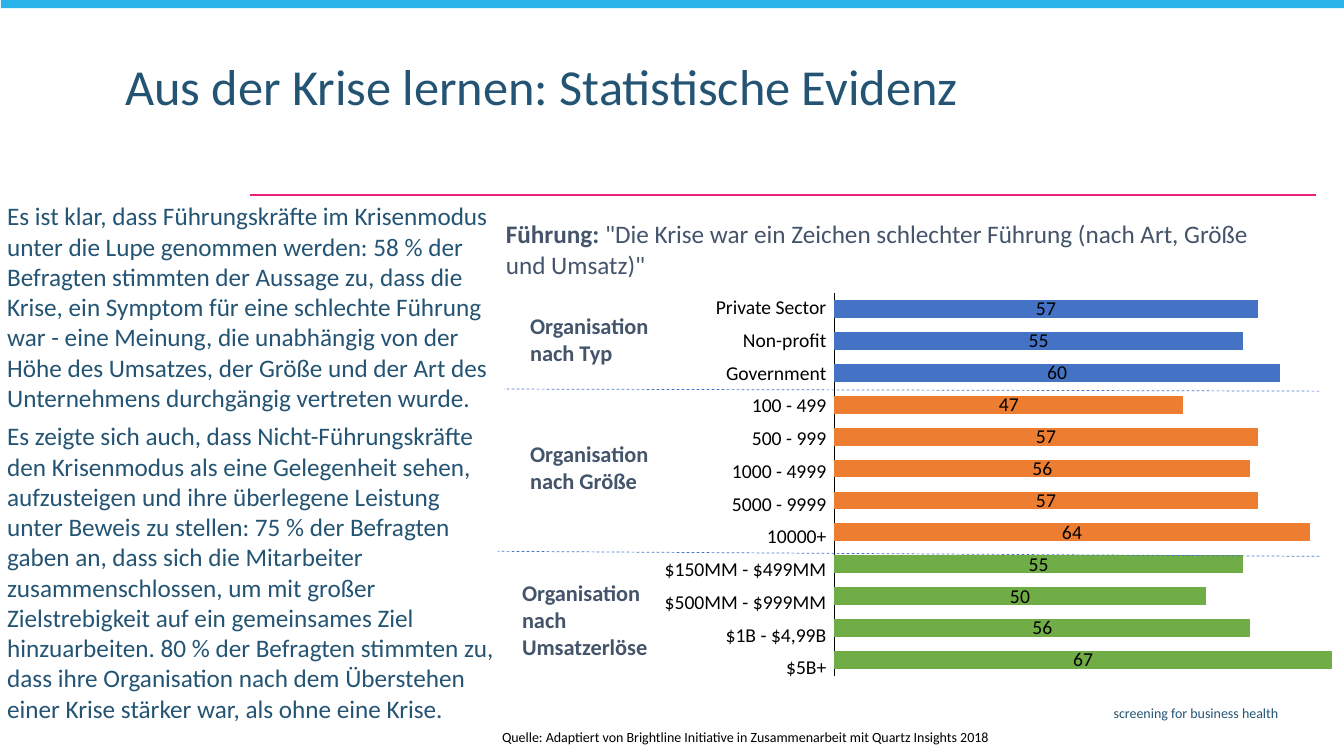
from copy import deepcopy
from lxml.etree import SubElement
from pptx import Presentation
from pptx.chart.data import CategoryChartData
from pptx.dml.color import RGBColor
from pptx.enum.chart import XL_CHART_TYPE as ChartType, XL_LABEL_POSITION as LabelPos
from pptx.enum.chart import XL_TICK_LABEL_POSITION as TickLabel, XL_TICK_MARK as Tick
from pptx.enum.dml import MSO_LINE as Dash
from pptx.enum.shapes import MSO_CONNECTOR as Connector, MSO_SHAPE as Shape
from pptx.enum.text import MSO_ANCHOR as Anchor, MSO_AUTO_SIZE as AutoSize, PP_ALIGN as Align
from pptx.oxml.ns import qn
from pptx.util import Pt

COLORS = {"navy": "245473", "sky": "29B3E8", "pink": "EC2179", "slate": "44546A",
          "blue": "4472C4", "orange": "ED7D31", "green": "70AD47", "black": "000000"}
TITLE = "Aus der Krise lernen: Statistische Evidenz"
FINDINGS = [
    "Es ist klar, dass Führungskräfte im Krisenmodus unter die Lupe genommen werden: "
    "58 % der Befragten stimmten der Aussage zu, dass die Krise, ein Symptom für eine "
    "schlechte Führung war - eine Meinung, die unabhängig von der Höhe des Umsatzes, der "
    "Größe und der Art des Unternehmens durchgängig vertreten wurde.",
    "Es zeigte sich auch, dass Nicht-Führungskräfte den Krisenmodus als eine Gelegenheit "
    "sehen, aufzusteigen und ihre überlegene Leistung unter Beweis zu stellen: 75 % der "
    "Befragten gaben an, dass sich die Mitarbeiter zusammenschlossen, um mit großer "
    "Zielstrebigkeit auf ein gemeinsames Ziel hinzuarbeiten. 80 % der Befragten stimmten "
    "zu, dass ihre Organisation nach dem Überstehen einer Krise stärker war, als ohne eine "
    "Krise.",
]
HEADING = ("Führung:",
           ' "Die Krise war ein Zeichen schlechter Führung (nach Art, Größe und Umsatz)"')
SOURCE = "Quelle: Adaptiert von Brightline Initiative in Zusammenarbeit mit Quartz Insights 2018"
TAGLINE = "screening for business health"
GROUPS = [
    ("Organisation\vnach Typ", "blue", (377.3, 221.8, 100, 41.8),
     [("Private Sector", 57, 80), ("Non-profit", 55, 60), ("Government", 60, 73)]),
    ("Organisation\vnach Größe", "orange", (377.3, 313.2, 100, 41.8),
     [("100 - 499", 47, 54), ("500 - 999", 57, 54), ("1000 - 4999", 56, 68),
      ("5000 - 9999", 57, 68), ("10000+", 64, 43)]),
    ("Organisation\vnach\vUmsatzerlöse", "green", (371.5, 412.6, 100, 61.2),
     [("$150MM - $499MM", 55, 116), ("$500MM - $999MM", 50, 116),
      ("$1B - $4,99B", 56, 73), ("$5B+", 67, 30)]),
]
LINES = [((940.3, 139), (178.6, 139), "pink", 1.5, None),
         ((942.5, 279.4), (360, 277.9), "blue", 0.5, Dash.DASH),
         ((942.5, 397.4), (355.7, 393.8), "blue", 0.5, Dash.DASH)]
LABEL_RIGHT, LABEL_TOP, LABEL_STEP, LABEL_HEIGHT = 590.4, 212.6, 23.4, 15.1
PLOT = {"x": 0.029, "y": 0.037, "w": 0.966, "h": 0.94}


def rgb(name):
    return RGBColor.from_string(COLORS[name])


def apply(target, **formats):
    for key, setting in formats.items():
        setattr(target, key, setting)


def place(part, box):
    apply(part, **dict(zip(("left", "top", "width", "height"), map(Pt, box))))


def write(part, paragraphs, size, color, inset=3.6, bold=False, wrap=True, anchor=Anchor.TOP,
          align=Align.LEFT, spacing=1.0, before=0):
    frame = part.text_frame
    apply(frame, auto_size=AutoSize.NONE, word_wrap=wrap, vertical_anchor=anchor)
    apply(frame, **{f"margin_{side}": Pt(inset) for side in ("left", "right", "top", "bottom")})
    for index, wording in enumerate(paragraphs):
        paragraph = frame.add_paragraph() if index else frame.paragraphs[0]
        paragraph.text = wording
        apply(paragraph, alignment=align, line_spacing=spacing,
              space_before=Pt(before if index else 0))
        for run in paragraph.runs:
            apply(run.font, name="Calibri", size=Pt(size), bold=bold)
            run.font.color.rgb = rgb(color)
        for line_break in paragraph._p.findall(qn("a:br")):
            line_break.insert(0, deepcopy(paragraph.runs[0]._r.rPr))
    return frame


def add_text(slide, box, paragraphs, *args, **formats):
    part = slide.shapes.add_textbox(*map(Pt, box))
    return write(part, paragraphs, *args, **formats)


def add_line(slide, start, end, color, width, dash):
    rule = slide.shapes.add_connector(Connector.STRAIGHT, *map(Pt, start + end))
    rule.line.color.rgb = rgb(color)
    apply(rule.line, width=Pt(width), dash_style=dash)
    SubElement(rule._element.spPr, qn("a:effectLst"))


def add_bars(slide, answers):
    survey = CategoryChartData()
    survey.categories = [str(number) for number in range(1, len(answers) + 1)]
    survey.add_series("Series 1", [share for _, share, _, _ in answers])
    chart = slide.shapes.add_chart(ChartType.BAR_STACKED, *map(Pt, (585.4, 198.7, 367.9, 290.9)),
                                   survey).chart
    apply(chart, has_legend=False, has_title=False)
    apply(chart.font, name="Calibri", size=Pt(10))
    chart.font.color.rgb = rgb("black")
    for axis in (chart.category_axis, chart.value_axis):
        apply(axis, tick_label_position=TickLabel.NONE, major_tick_mark=Tick.NONE,
              minor_tick_mark=Tick.NONE, has_major_gridlines=False)
    chart.category_axis.reverse_order = True
    chart.category_axis.format.line.color.rgb = rgb("black")
    chart.category_axis.format.line.width = Pt(1)
    apply(chart.value_axis, minimum_scale=0, maximum_scale=67, major_unit=16.75)
    chart.value_axis.format.line.fill.background()

    plot = chart.plots[0]
    apply(plot, gap_width=80, overlap=100, vary_by_categories=False, has_data_labels=True)
    apply(plot.data_labels, show_value=True, position=LabelPos.CENTER, number_format="#,##0",
          number_format_is_linked=False)
    apply(plot.data_labels.font, name="Calibri", size=Pt(14))
    plot.data_labels.font.color.rgb = rgb("black")
    bars = plot.series[0]
    bars.format.fill.solid()
    bars.format.fill.fore_color.rgb = rgb("orange")
    for index, (_, _, _, color) in enumerate(answers):
        if color != "orange":
            fill = bars.points[index].format.fill
            fill.solid()
            fill.fore_color.rgb = rgb(color)

    area = chart._chartSpace.chart.plotArea
    for old in area.findall(qn("c:layout")):
        area.remove(old)
    layout = area.makeelement(qn("c:layout"), {})
    area.insert(0, layout)
    manual = SubElement(layout, qn("c:manualLayout"))
    settings = {"layoutTarget": "inner", "xMode": "edge", "yMode": "edge", **PLOT}
    for tag, setting in settings.items():
        SubElement(manual, qn(f"c:{tag}")).set("val", str(setting))


def main():
    deck = Presentation()
    apply(deck, slide_width=Pt(960), slide_height=Pt(540))
    slide = deck.slides.add_slide(deck.slide_layouts[1])

    band = slide.shapes.add_shape(Shape.RECTANGLE, *map(Pt, (0.7, -1.4, 960.5, 7.2)))
    band.shadow.inherit = False
    band.fill.solid()
    band.fill.fore_color.rgb = rgb("sky")
    band.line.fill.background()

    title, findings = slide.placeholders
    place(title, (82.1, 36.7, 697, 54.7))
    write(title, [TITLE], 36, "navy", inset=7.2, spacing=0.9)
    place(findings, (2.2, 140.4, 357.8, 383))
    body = write(findings, FINDINGS, 18, "navy", inset=2.9, before=6)
    for paragraph in body.paragraphs:
        properties = paragraph._p.get_or_add_pPr()
        properties.set("marL", "0")
        properties.set("indent", "0")
        SubElement(properties, qn("a:buNone"))

    add_text(slide, (266.4, 499.7, 650.2, 18), [TAGLINE], 10, "navy", align=Align.RIGHT)
    add_text(slide, (355, 517.7, 429.1, 18), [SOURCE], 10, "black", anchor=Anchor.BOTTOM)

    answers = [(*answer, color) for _, color, _, members in GROUPS for answer in members]
    add_bars(slide, answers)
    for index, (label, _, width, _) in enumerate(answers):
        box = (LABEL_RIGHT - width, LABEL_TOP + index * LABEL_STEP, width, LABEL_HEIGHT)
        add_text(slide, box, [label], 14, "black", inset=0, wrap=False, anchor=Anchor.MIDDLE,
                 align=Align.RIGHT, spacing=0.9)

    lead, statement = HEADING
    heading = add_text(slide, (360, 154.8, 564.5, 46.1), [lead], 18, "slate", inset=1.4, bold=True)
    quote = heading.paragraphs[0].add_run()
    quote.text = statement
    apply(quote.font, name="Calibri", size=Pt(18), bold=False)
    quote.font.color.rgb = rgb("slate")

    for rule in LINES:
        add_line(slide, *rule)
    for name, _, box, _ in GROUPS:
        add_text(slide, box, [name], 16, "slate", inset=1.4, bold=True)

    deck.save("out.pptx")


if __name__ == "__main__":
    main()
